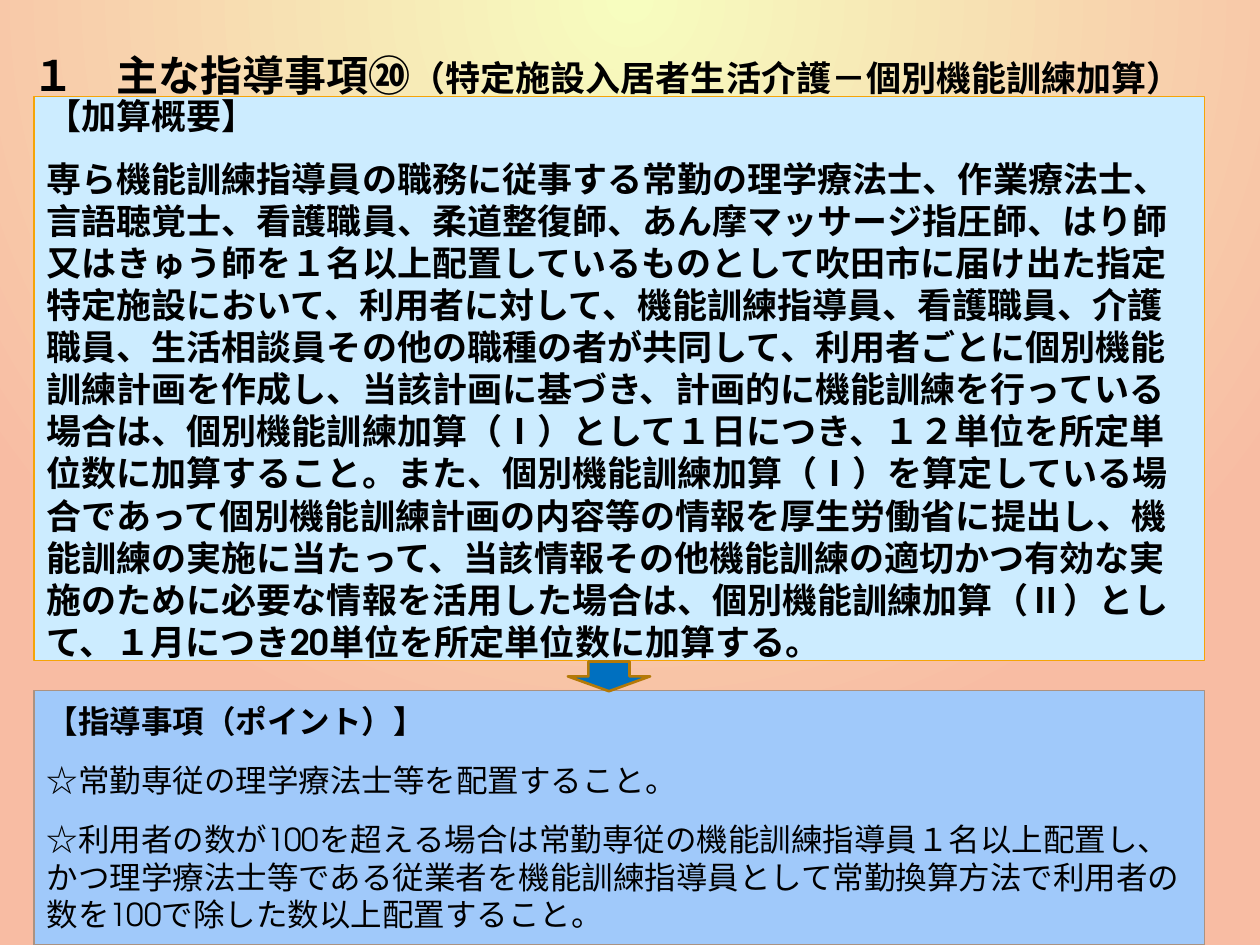
from lxml.etree import SubElement
from pptx import Presentation
from pptx.dml.color import RGBColor
from pptx.enum.shapes import MSO_SHAPE
from pptx.enum.text import MSO_ANCHOR, PP_ALIGN
from pptx.oxml.ns import qn
from pptx.util import Pt


def color(text):
    return RGBColor.from_string(text)


class Page:
    font = "TeX Gyre Adventor"
    ink = "000000"

    def __init__(self, deck):
        self.slide = deck.slides.add_slide(deck.slide_layouts[6])

    def backdrop(self, inner, outer):
        """Radial gradient spreading from the top centre."""
        fill = self.slide.background.fill
        fill.gradient()
        for stop, tone, place in zip(fill.gradient_stops, (inner, outer), (0, 1)):
            stop.color.rgb = color(tone)
            stop.position = place
        line = self.slide.element.find(".//" + qn("a:lin"))
        grad = line.getparent()
        grad.remove(line)
        ring = SubElement(grad, qn("a:path"), path="circle")
        SubElement(ring, qn("a:fillToRect"), b="100000")

    def style(self, run, size, bold):
        font = run.font
        font.name, font.size, font.bold = self.font, Pt(size), bold
        font.color.rgb = color(self.ink)
        SubElement(font._element, qn("a:ea"), typeface=self.font)

    def title(self, box, parts):
        frame = self.slide.shapes.add_textbox(*map(Pt, box)).text_frame
        frame.word_wrap = True
        for text, size in parts:
            run = frame.paragraphs[0].add_run()
            run.text = text
            self.style(run, size, True)

    def shape(self, kind, box, fill, edge, width):
        item = self.slide.shapes.add_shape(kind, *map(Pt, box))
        item.shadow.inherit = False
        item.fill.solid()
        item.fill.fore_color.rgb = color(fill)
        item.line.color.rgb = color(edge)
        item.line.width = Pt(width)
        return item

    def panel(self, box, fill, edge, size, lines):
        frame = self.shape(MSO_SHAPE.RECTANGLE, box, fill, edge, 0.75).text_frame
        frame.word_wrap = True
        frame.vertical_anchor = MSO_ANCHOR.MIDDLE
        frame.text = "\n".join(text for text, _ in lines)
        for para, (_, bold) in zip(frame.paragraphs, lines):
            para.alignment = PP_ALIGN.LEFT
            para.space_before = para.space_after = Pt(6)
            self.style(para.runs[0], size, bold)


def main():
    deck = Presentation()
    deck.slide_width, deck.slide_height = Pt(720), Pt(540)
    page = Page(deck)
    page.backdrop("F7FDBF", "F8BCA3")
    left, width = 19.5, 669

    # Heading
    page.title((11.5, 24.5, 677.5, 30), [
        ("１　主な指導事項⑳", 24),
        ("（特定施設入居者生活介護－個別機能訓練加算）", 20),
    ])

    # Outline of the addition
    page.panel((left, 55, width, 322.5), "CCECFF", "F5A408", 20, [
        ("【加算概要】", True),
        ("専ら機能訓練指導員の職務に従事する常勤の理学療法士、作業療法士、"
         "言語聴覚士、看護職員、柔道整復師、あん摩マッサージ指圧師、はり師"
         "又はきゅう師を１名以上配置しているものとして吹田市に届け出た指定"
         "特定施設において、利用者に対して、機能訓練指導員、看護職員、介護"
         "職員、生活相談員その他の職種の者が共同して、利用者ごとに個別機能"
         "訓練計画を作成し、当該計画に基づき、計画的に機能訓練を行っている"
         "場合は、個別機能訓練加算（Ⅰ）として１日につき、１２単位を所定単"
         "位数に加算すること。また、個別機能訓練加算（Ⅰ）を算定している場"
         "合であって個別機能訓練計画の内容等の情報を厚生労働省に提出し、機"
         "能訓練の実施に当たって、当該情報その他機能訓練の適切かつ有効な実"
         "施のために必要な情報を活用した場合は、個別機能訓練加算（Ⅱ）とし"
         "て、１月につき20単位を所定単位数に加算する。", True),
    ])

    # Points of guidance
    page.panel((left, 394.5, width, 145.5), "A0C9FA", "AB9281", 18, [
        ("【指導事項（ポイント）】", True),
        ("☆常勤専従の理学療法士等を配置すること。", False),
        ("☆利用者の数が100を超える場合は常勤専従の機能訓練指導員１名以上配置し、"
         "かつ理学療法士等である従業者を機能訓練指導員として常勤換算方法で利用者の"
         "数を100で除した数以上配置すること。", False),
    ])

    # Arrow between the panels
    page.shape(MSO_SHAPE.DOWN_ARROW, (324.5, 378, 47, 17), "0070C0", "B57906", 1.5)

    deck.save("out.pptx")


if __name__ == "__main__":
    main()
